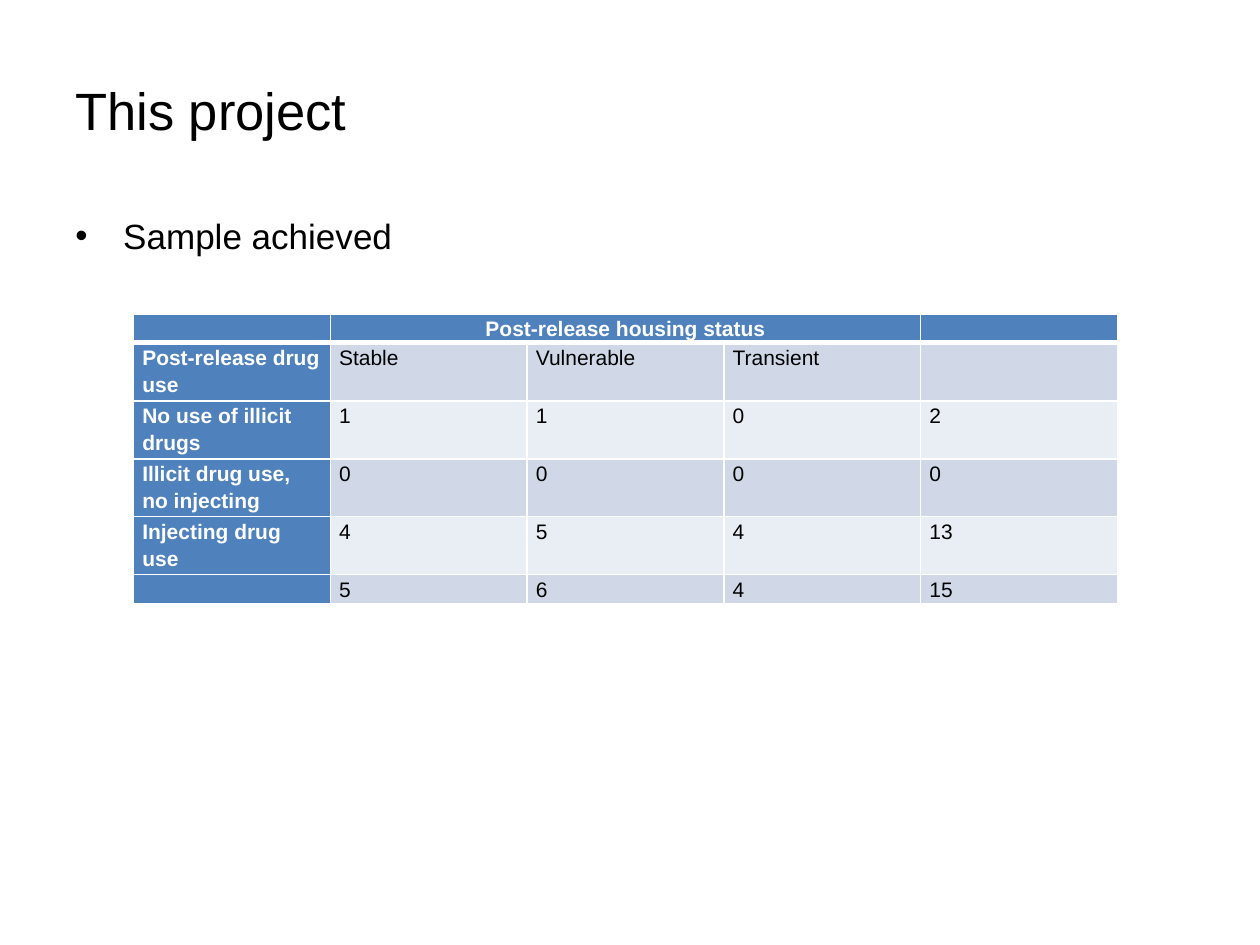
from dataclasses import dataclass

from lxml import etree
from pptx import Presentation
from pptx.dml.color import RGBColor
from pptx.enum.text import MSO_ANCHOR, PP_ALIGN
from pptx.oxml.ns import qn
from pptx.util import Inches, Pt

TOP = MSO_ANCHOR.TOP
CENTER, LEFT = PP_ALIGN.CENTER, PP_ALIGN.LEFT


@dataclass(frozen=True)
class Theme:
    font: str = "Arial"
    text: str = "000000"
    white: str = "FFFFFF"
    header: str = "4F81BD"
    bands: tuple = ("E9EDF4", "D0D8E8")
    title_size: int = 30
    body_size: int = 20
    table_size: int = 12
    line: int = 1
    heavy_line: int = 3


THEME = Theme()

SAMPLE = [
    ["", "Post-release housing status", "", "", ""],
    ["Post-release drug use", "Stable", "Vulnerable", "Transient", ""],
    ["No use of illicit drugs", "1", "1", "0", "2"],
    ["Illicit drug use, no injecting", "0", "0", "0", "0"],
    ["Injecting drug use", "4", "5", "4", "13"],
    ["", "5", "6", "4", "15"],
]
ROW_HEIGHTS = [0.21, 0.43, 0.43, 0.43, 0.43, 0.21]


def style_font(paragraph, size, color, bold=False):
    font = paragraph.font
    font.name = THEME.font
    font.size = Pt(size)
    font.bold = bold
    font.color.rgb = RGBColor.from_string(color)


def add_text(slide, text, left, top, width, height, size):
    box = slide.shapes.add_textbox(Inches(left), Inches(top), Inches(width), Inches(height))
    frame = box.text_frame
    frame.word_wrap = True
    frame.vertical_anchor = TOP
    paragraph = frame.paragraphs[0]
    paragraph.text = text
    return paragraph, size


def add_title(slide, text, left, top, width, height):
    paragraph, size = add_text(slide, text, left, top, width, height, THEME.title_size)
    style_font(paragraph, size, THEME.text)


def add_bullet(slide, text, left, top, width, height):
    paragraph, size = add_text(slide, text, left, top, width, height, THEME.body_size)
    properties = paragraph._p.get_or_add_pPr()
    properties.set("marL", str(Inches(0.38)))
    properties.set("indent", str(-Inches(0.38)))
    etree.SubElement(properties, qn("a:buFont"), typeface=THEME.font)
    etree.SubElement(properties, qn("a:buChar"), char="•")
    style_font(paragraph, size, THEME.text)


def set_borders(cell, widths):
    """Draw white borders; widths maps each side to points."""
    properties = cell._tc.get_or_add_tcPr()
    for position, (side, width) in enumerate(widths.items()):
        line = etree.Element(qn(f"a:ln{side}"), w=str(Pt(width)))
        fill = etree.SubElement(line, qn("a:solidFill"))
        etree.SubElement(fill, qn("a:srgbClr"), val=THEME.white)
        properties.insert(position, line)


def fill_cell(cell, text, row, column):
    is_header = row == 0 or column == 0
    cell.fill.solid()
    cell.fill.fore_color.rgb = RGBColor.from_string(
        THEME.header if is_header else THEME.bands[row % 2])
    cell.margin_left = cell.margin_right = Inches(0.07)
    cell.margin_top = cell.margin_bottom = 0
    cell.vertical_anchor = TOP
    paragraph = cell.text_frame.paragraphs[0]
    paragraph.text = text
    paragraph.alignment = CENTER if row == 0 else LEFT
    paragraph.line_spacing = 1.15
    style_font(paragraph, THEME.table_size, THEME.white if is_header else THEME.text, is_header)
    if not text:  # keeps an empty line as low as a filled one
        etree.SubElement(paragraph._p, qn("a:endParaRPr"), sz=str(THEME.table_size * 100))
    set_borders(cell, {
        "L": THEME.line,
        "R": THEME.line,
        "T": THEME.heavy_line if row == 1 else THEME.line,
        "B": THEME.heavy_line if row == 0 else THEME.line,
    })


def add_sample_table(slide, left, top, width):
    column_count = len(SAMPLE[0])
    table = slide.shapes.add_table(
        len(SAMPLE), column_count, Inches(left), Inches(top),
        Inches(width), Inches(sum(ROW_HEIGHTS))).table
    for column in table.columns:
        column.width = Inches(width / column_count)
    for row, height in zip(table.rows, ROW_HEIGHTS):
        row.height = Inches(height)
    for row, values in enumerate(SAMPLE):
        for column, text in enumerate(values):
            fill_cell(table.cell(row, column), text, row, column)
    table.cell(0, 1).merge(table.cell(0, 3))


def main():
    presentation = Presentation()
    presentation.slide_width = Inches(10)
    presentation.slide_height = Inches(7.5)
    slide = presentation.slides.add_slide(presentation.slide_layouts[6])
    add_title(slide, "This project", 0.5, 0.57, 9, 0.87)
    add_bullet(slide, "Sample achieved", 0.5, 1.65, 9, 4.72)
    add_sample_table(slide, 1.06, 2.49, 7.81)
    presentation.save("out.pptx")


if __name__ == "__main__":
    main()
